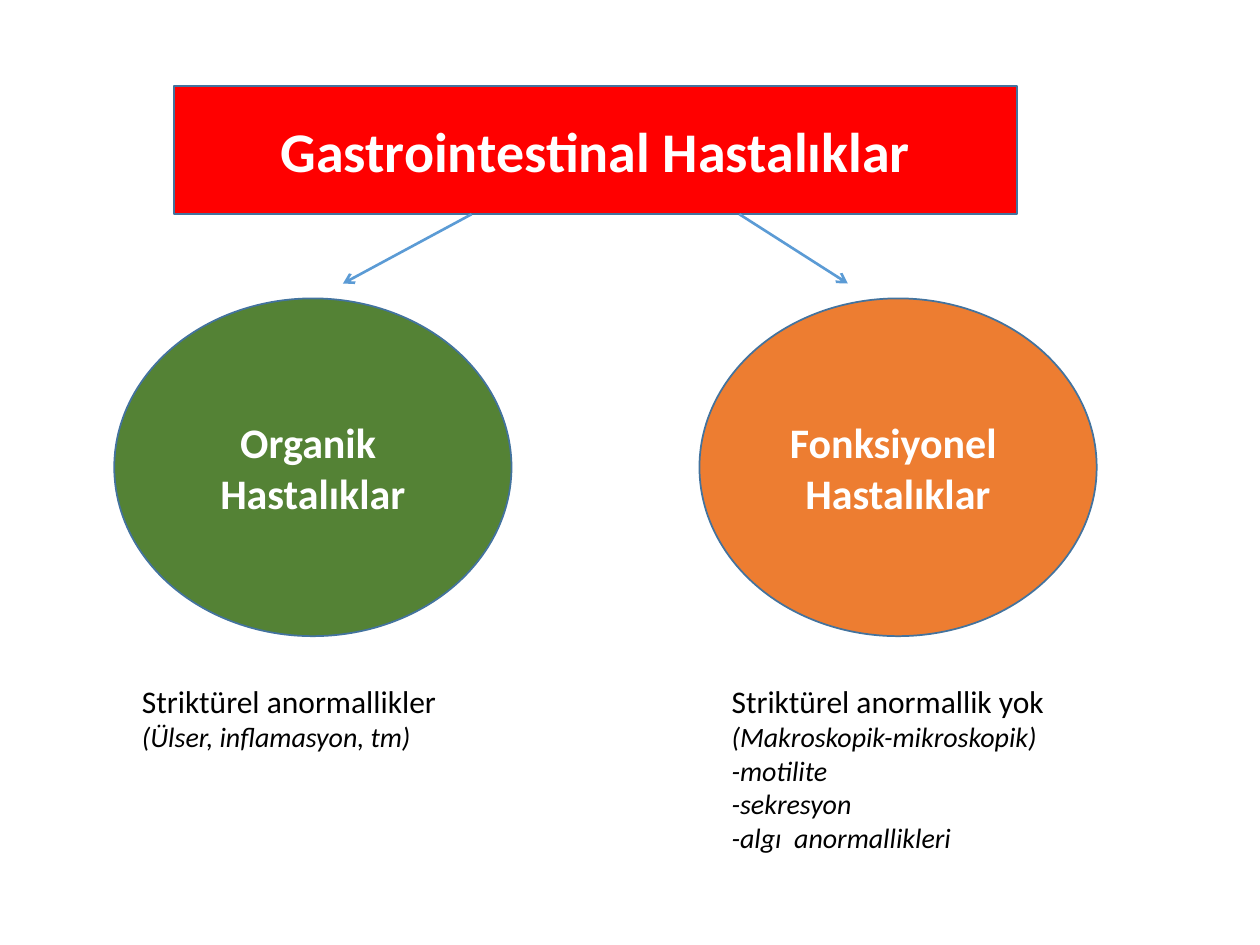
from dataclasses import dataclass

from lxml.etree import SubElement
from pptx import Presentation
from pptx.dml.color import RGBColor
from pptx.enum.shapes import MSO_CONNECTOR, MSO_SHAPE
from pptx.enum.text import MSO_ANCHOR, MSO_AUTO_SIZE, PP_ALIGN
from pptx.oxml.ns import qn
from pptx.util import Pt


@dataclass(frozen=True)
class Theme:
    font: str = "Calibri"
    red: str = "FF0000"
    green: str = "548235"
    orange: str = "ED7D31"
    outline: str = "43739E"
    arrow: str = "5B9BD5"
    white: str = "FFFFFF"
    black: str = "000000"
    title_size: int = 32
    group_size: int = 24
    finding_size: int = 18
    detail_size: int = 16


theme = Theme()


def style_paragraph(paragraph, size, color, bold=False, italic=False):
    for run in paragraph.runs:
        run.font.name = theme.font
        run.font.size = Pt(size)
        run.font.bold = bold
        run.font.italic = italic
        run.font.color.rgb = RGBColor.from_string(color)


def add_labelled_shape(preset, left, top, width, height, fill, label, size):
    shape = slide.shapes.add_shape(preset, Pt(left), Pt(top), Pt(width), Pt(height))
    shape.shadow.inherit = False
    shape.fill.solid()
    shape.fill.fore_color.rgb = RGBColor.from_string(fill)
    shape.line.color.rgb = RGBColor.from_string(theme.outline)
    shape.line.width = Pt(1)
    shape.text_frame.text = label
    shape.text_frame.vertical_anchor = MSO_ANCHOR.MIDDLE
    for paragraph in shape.text_frame.paragraphs:
        paragraph.alignment = PP_ALIGN.CENTER
        style_paragraph(paragraph, size, theme.white, bold=True)


presentation = Presentation()
presentation.slide_width = Pt(720)
presentation.slide_height = Pt(540)
slide = presentation.slides.add_slide(presentation.slide_layouts[6])

# Disease groups: label, fill, circle left, findings left and width, findings
groups = [
    ("Organik \nHastalıklar", theme.green, 65.3, 74, 184.5,
     ["Striktürel anormallikler", "(Ülser, inflamasyon, tm)"]),
    ("Fonksiyonel \nHastalıklar", theme.orange, 399.7, 411, 194.5,
     ["Striktürel anormallik yok", "(Makroskopik-mikroskopik)",
      "-motilite", "-sekresyon", "-algı  anormallikleri"]),
]
for label, fill, circle_left, findings_left, findings_width, lines in groups:
    add_labelled_shape(MSO_SHAPE.OVAL, circle_left, 170.5, 227, 193,
                       fill, label, theme.group_size)

    findings_height = 29 + 19.4 * (len(lines) - 1)
    findings = slide.shapes.add_textbox(
        Pt(findings_left), Pt(386), Pt(findings_width), Pt(findings_height)).text_frame
    findings.word_wrap = False
    findings.auto_size = MSO_AUTO_SIZE.SHAPE_TO_FIT_TEXT
    findings.text = "\n".join(lines)
    heading, *details = findings.paragraphs
    style_paragraph(heading, theme.finding_size, theme.black)
    for detail in details:
        style_paragraph(detail, theme.detail_size, theme.black, italic=True)

add_labelled_shape(MSO_SHAPE.RECTANGLE, 99.3, 49, 482, 73.4,
                   theme.red, "Gastrointestinal Hastalıklar", theme.title_size)

# Arrows from the title down to each group
for start_x, end_x in [(269.5, 196), (422.5, 484.5)]:
    arrow = slide.shapes.add_connector(
        MSO_CONNECTOR.STRAIGHT, Pt(start_x), Pt(122.4), Pt(end_x), Pt(162))
    arrow.line.color.rgb = RGBColor.from_string(theme.arrow)
    arrow.line.width = Pt(1.5)
    SubElement(arrow.line._get_or_add_ln(), qn("a:tailEnd"), type="arrow")
    SubElement(arrow._element.spPr, qn("a:effectLst"))

presentation.save("out.pptx")
